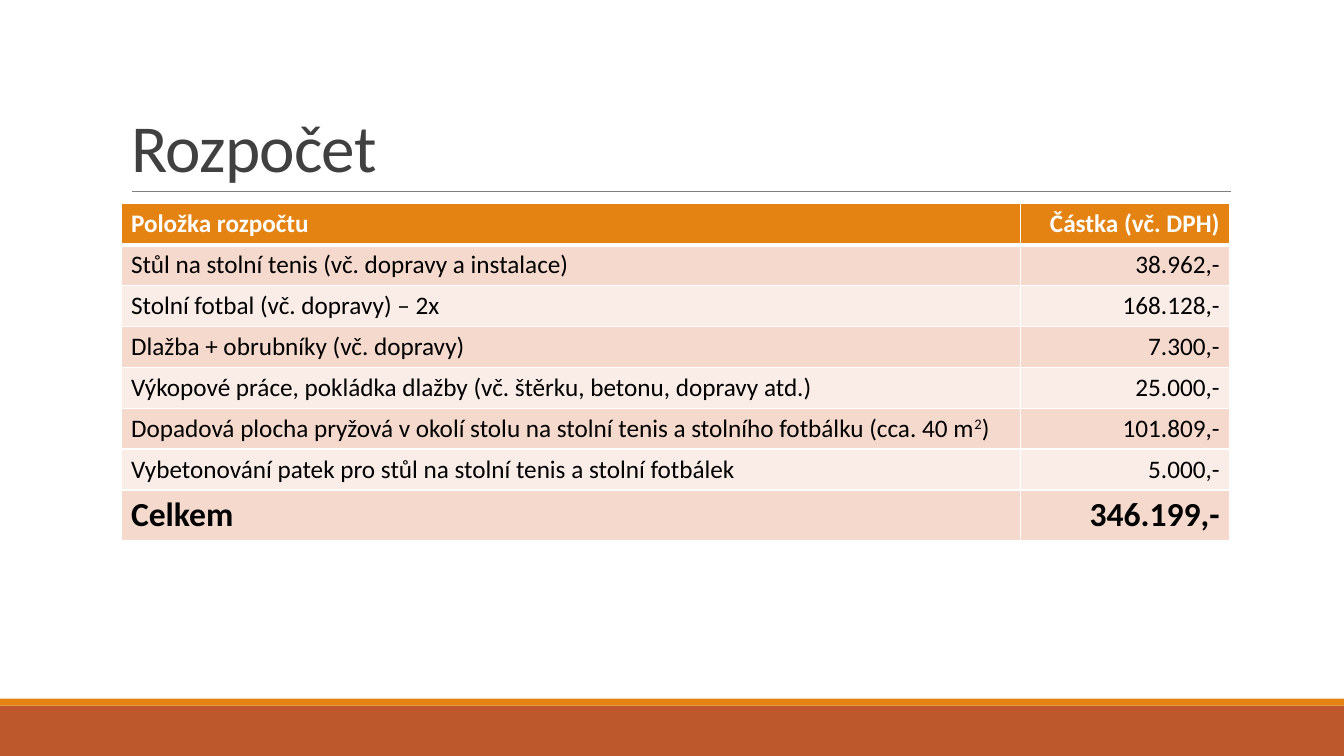
from dataclasses import dataclass

from lxml import etree
from pptx import Presentation
from pptx.dml.color import RGBColor
from pptx.enum.shapes import MSO_CONNECTOR, MSO_SHAPE
from pptx.enum.text import MSO_ANCHOR, MSO_AUTO_SIZE, PP_ALIGN
from pptx.oxml.ns import qn
from pptx.util import Pt

STRAIGHT, RECTANGLE = MSO_CONNECTOR.STRAIGHT, MSO_SHAPE.RECTANGLE
LEFT, RIGHT = PP_ALIGN.LEFT, PP_ALIGN.RIGHT
BOTTOM, TOP, NO_FIT = MSO_ANCHOR.BOTTOM, MSO_ANCHOR.TOP, MSO_AUTO_SIZE.NONE

# Content
TITLE = "Rozpočet"
HEADER = ("Položka rozpočtu", "Částka (vč. DPH)")
ITEMS = [
    ("Stůl na stolní tenis (vč. dopravy a instalace)", "38.962,-"),
    ("Stolní fotbal (vč. dopravy) – 2x", "168.128,-"),
    ("Dlažba + obrubníky (vč. dopravy)", "7.300,-"),
    ("Výkopové práce, pokládka dlažby (vč. štěrku, betonu, dopravy atd.)", "25.000,-"),
    (("Dopadová plocha pryžová v okolí stolu na stolní tenis a stolního fotbálku (cca. 40 m",
      "2", ")"), "101.809,-"),
    ("Vybetonování patek pro stůl na stolní tenis a stolní fotbálek", "5.000,-"),
]
TOTAL = ("Celkem", "346.199,-")


@dataclass(frozen=True)
class Theme:
    font: str = "Calibri"
    title_size: int = 48
    body_size: int = 18
    total_size: int = 24
    title: str = "404040"
    text: str = "000000"
    white: str = "FFFFFF"
    rule: str = "808080"
    accent: str = "E48312"
    footer: str = "BD582C"
    bands: tuple = ("F5D9CC", "FAEDE7")


THEME = Theme()

# Layout in points
SLIDE_W, SLIDE_H = 960, 540
FOOTER_H, STRIPE_H = 36, 5
BODY_LEFT, BODY_W = 86.4, 792
TITLE_TOP, TITLE_H = 22.3, 114.5
RULE_LEFT, RULE_RIGHT, RULE_Y = 94.3, 879, 136.8
TABLE_TOP, AMOUNT_W = 145.6, 149.6
ROW_H, TOTAL_H = 29.2, 36.5


def color(value):
    return RGBColor.from_string(value)


def style_run(run, size, ink, bold=False):
    run.font.name = THEME.font
    run.font.size = Pt(size)
    run.font.bold = bold
    run.font.color.rgb = color(ink)


def add_bar(slide, top, height, fill):
    bar = slide.shapes.add_shape(RECTANGLE, 0, Pt(top), Pt(SLIDE_W), Pt(height))
    bar.shadow.inherit = False
    bar.fill.solid()
    bar.fill.fore_color.rgb = color(fill)
    bar.line.fill.background()


def set_borders(cell, widths):
    properties = cell._tc.get_or_add_tcPr()
    for side, width in widths.items():
        border = etree.SubElement(properties, qn(f"a:ln{side}"), w=str(Pt(width)))
        fill = etree.SubElement(border, qn("a:solidFill"))
        etree.SubElement(fill, qn("a:srgbClr"), val=THEME.white)


def fill_cell(cell, content, align, fill, size, ink, bold, widths):
    set_borders(cell, widths)
    cell.fill.solid()
    cell.fill.fore_color.rgb = color(fill)
    paragraph = cell.text_frame.paragraphs[0]
    paragraph.alignment = align
    # A tuple holds base text, superscript and the rest
    parts = (content,) if isinstance(content, str) else content
    for index, part in enumerate(parts):
        run = paragraph.add_run()
        run.text = part
        style_run(run, size, ink, bold)
        if index == 1:
            run.font._element.set("baseline", "30000")


def add_title(slide):
    title = slide.shapes.title
    title.left, title.top = Pt(BODY_LEFT), Pt(TITLE_TOP)
    title.width, title.height = Pt(BODY_W), Pt(TITLE_H)
    frame = title.text_frame
    frame.text = TITLE
    frame.word_wrap = True
    frame.auto_size = NO_FIT
    frame.vertical_anchor = BOTTOM
    paragraph = frame.paragraphs[0]
    paragraph.alignment = LEFT
    paragraph.line_spacing = 0.85
    run = paragraph.runs[0]
    style_run(run, THEME.title_size, THEME.title)
    run.font._element.set("spc", "-50")


def add_rule(slide):
    rule = slide.shapes.add_connector(
        STRAIGHT, Pt(RULE_LEFT), Pt(RULE_Y), Pt(RULE_RIGHT), Pt(RULE_Y))
    rule.line.color.rgb = color(THEME.rule)
    rule.line.width = Pt(0.5)
    etree.SubElement(rule._element.spPr, qn("a:effectLst"))


def add_budget(slide):
    rows = [HEADER, *ITEMS, TOTAL]
    last = len(rows) - 1
    heights = [ROW_H] * last + [TOTAL_H]
    budget = slide.shapes.add_table(
        len(rows), len(HEADER), Pt(BODY_LEFT), Pt(TABLE_TOP),
        Pt(BODY_W), Pt(sum(heights))).table
    for column, width in zip(budget.columns, (BODY_W - AMOUNT_W, AMOUNT_W)):
        column.width = Pt(width)
    for index, (row, height) in enumerate(zip(rows, heights)):
        budget.rows[index].height = Pt(height)
        is_header, is_total = index == 0, index == last
        fill = THEME.accent if is_header else THEME.bands[(index - 1) % 2]
        ink = THEME.white if is_header else THEME.text
        size = THEME.total_size if is_total else THEME.body_size
        widths = {"L": 1, "R": 1, "T": 3 if index == 1 else 1, "B": 3 if is_header else 1}
        for column, (content, align) in enumerate(zip(row, (LEFT, RIGHT))):
            cell = budget.cell(index, column)
            cell.vertical_anchor = TOP
            fill_cell(cell, content, align, fill, size, ink, is_header or is_total, widths)


def main():
    deck = Presentation()
    deck.slide_width, deck.slide_height = Pt(SLIDE_W), Pt(SLIDE_H)
    slide = deck.slides.add_slide(deck.slide_layouts[5])

    # Footer bars
    footer_top = SLIDE_H - FOOTER_H
    add_bar(slide, footer_top, FOOTER_H, THEME.footer)
    add_bar(slide, footer_top - STRIPE_H, STRIPE_H, THEME.accent)

    # Heading and budget
    add_rule(slide)
    add_title(slide)
    add_budget(slide)
    deck.save("out.pptx")


if __name__ == "__main__":
    main()
